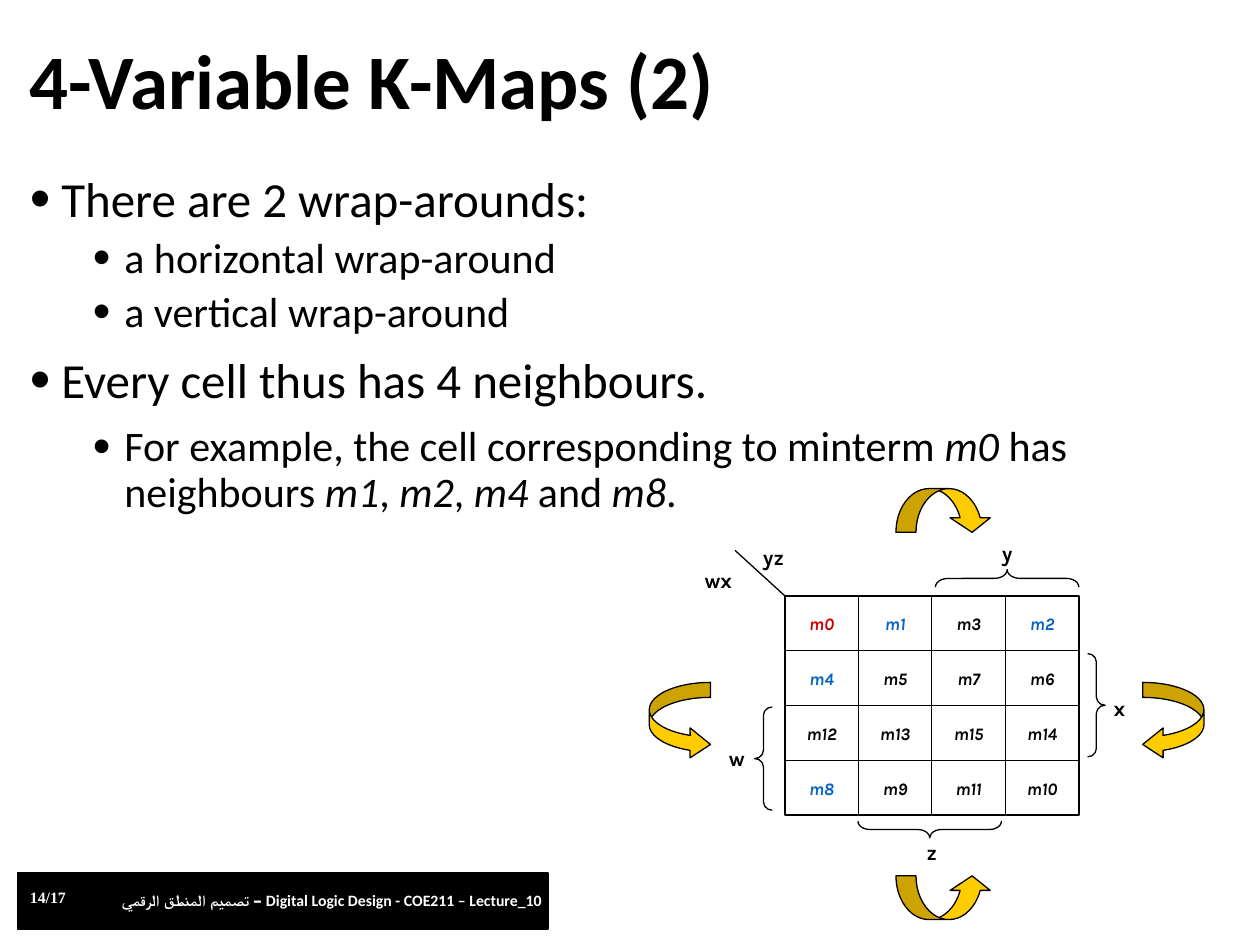
from dataclasses import dataclass

from lxml.etree import SubElement
from pptx import Presentation
from pptx.dml.color import RGBColor
from pptx.enum.shapes import MSO_CONNECTOR as Connector, MSO_SHAPE as Preset
from pptx.enum.text import MSO_ANCHOR as Anchor, PP_ALIGN as Align
from pptx.oxml.ns import qn
from pptx.util import Pt

COLORS = {"black": "000000", "white": "FFFFFF", "red": "CC0000", "blue": "0563C1", "gold": "FFCC00"}
TITLE = {"name": "Calibri", "size": Pt(44), "bold": True}
FOOTER = {"name": "Calibri", "size": Pt(9), "bold": True}
NUMBER = {**FOOTER, "name": "Times New Roman"}
LABEL = {"name": "Karla", "size": Pt(12), "bold": True}
MINTERM = {**LABEL, "size": Pt(10), "italic": True}

MAP_LEFT, MAP_TOP = 448.5, 340.5
CELL_WIDTH, CELL_HEIGHT = 42, 31.35
MAP = [
    ["m0", "m1", "m3", "m2"],
    ["m4", "m5", "m7", "m6"],
    ["m12", "m13", "m15", "m14"],
    ["m8", "m9", "m11", "m10"],
]
CELL_COLORS = {"m0": "red", **dict.fromkeys(["m1", "m2", "m4", "m8"], "blue")}


@dataclass
class Area:
    left: float
    top: float
    width: float
    height: float

    def points(self) -> list:
        return [Pt(value) for value in (self.left, self.top, self.width, self.height)]


@dataclass
class Label:
    text: str
    area: Area


@dataclass
class Outline:
    preset: Preset
    area: Area
    adjustments: tuple = ()
    rotation: int = 0
    flip: str = ""
    fill: str = ""
    weight: float = 0.75


@dataclass
class Bullet:
    level: int
    before: int
    unit: str
    spans: list


LABELS = [
    Label("w", Area(405.5, 422.5, 31, 25)),
    Label("x", Area(624.25, 394, 31, 25)),
    Label("y", Area(560, 305.25, 31, 19.5)),
    Label("z", Area(517, 476, 31, 19)),
    Label("wx", Area(384.5, 321, 52, 22)),
    Label("yz", Area(424, 307.5, 36, 20)),
]
SIDE_BRACE, FLAT_BRACE = (0.475, 0.5), (0.72, 0.5)
SIDE_ARROW, FLAT_ARROW = (0.244, 0.488, 0.333), (0.459, 0.918, 0.333)
OUTLINES = [
    Outline(Preset.LEFT_BRACE, Area(431.25, 404, 10, 59), SIDE_BRACE),
    Outline(Preset.LEFT_BRACE, Area(621.5, 373.5, 10, 59), SIDE_BRACE, flip="flipH"),
    Outline(Preset.LEFT_BRACE, Area(570.5, 289.5, 10, 82), FLAT_BRACE, rotation=90),
    Outline(Preset.LEFT_BRACE, Area(526.5, 433, 9.5, 82), FLAT_BRACE, rotation=270),
    Outline(Preset.CURVED_RIGHT_ARROW, Area(371, 390, 35, 44), SIDE_ARROW, fill="gold"),
    Outline(Preset.CURVED_RIGHT_ARROW, Area(653, 390, 35, 44), SIDE_ARROW, flip="flipH", fill="gold"),
    Outline(Preset.CURVED_UP_ARROW, Area(512, 500.5, 55, 25), FLAT_ARROW, fill="gold"),
    Outline(Preset.CURVED_UP_ARROW, Area(512, 279.25, 55, 25), FLAT_ARROW, flip="flipV", fill="gold"),
]
BULLETS = [
    Bullet(0, 10, "spcPts", ["There are 2 wrap-arounds:"]),
    Bullet(1, 5, "spcPts", ["a horizontal wrap-around"]),
    Bullet(1, 5, "spcPts", ["a vertical wrap-around"]),
    Bullet(0, 40, "spcPct", ["Every cell thus has 4 neighbours."]),
    Bullet(1, 40, "spcPct", [
        "For example, the cell corresponding to minterm ", "m0", " has neighbours ",
        "m1", ", ", "m2", ", ", "m4", " and ", "m8", ".",
    ]),
]


def color(name: str) -> RGBColor:
    return RGBColor.from_string(COLORS[name])


def add_span(para, text: str, style: dict, ink: str = "black") -> None:
    span = para.add_run()
    span.text = text
    for attribute, value in style.items():
        setattr(span.font, attribute, value)
    span.font.color.rgb = color(ink)


def add_box(page, area: Area, wrap: bool = True):
    frame = page.shapes.add_textbox(*area.points()).text_frame
    frame.word_wrap = wrap
    return frame


def add_text(page, label: Label, style: dict, ink: str = "black", align=Align.LEFT, wrap: bool = True):
    frame = add_box(page, label.area, wrap)
    frame.paragraphs[0].alignment = align
    add_span(frame.paragraphs[0], label.text, style, ink)
    return frame


def add_outline(page, outline: Outline) -> None:
    shape = page.shapes.add_shape(outline.preset, *outline.area.points())
    shape.shadow.inherit = False
    shape.rotation = outline.rotation
    for index, value in enumerate(outline.adjustments):
        shape.adjustments[index] = value
    if outline.flip:
        shape.element.spPr.find(qn("a:xfrm")).set(outline.flip, "1")
    if outline.fill:
        shape.fill.solid()
        shape.fill.fore_color.rgb = color(outline.fill)
    else:
        shape.fill.background()
    shape.line.color.rgb = color("black")
    shape.line.width = Pt(outline.weight)


def add_line(page, *ends: float) -> None:
    line = page.shapes.add_connector(Connector.STRAIGHT, *[Pt(value) for value in ends])
    line.line.color.rgb = color("black")
    line.line.width = Pt(0.75)
    SubElement(line.element.spPr, qn("a:effectLst"))


def add_bullet(para, bullet: Bullet) -> None:
    para.level = bullet.level
    para.line_spacing = 0.9
    properties = para._p.get_or_add_pPr()
    properties.set("marL", str(Pt(18 + 36 * bullet.level)))
    properties.set("indent", str(Pt(-18)))
    scale = 1000 if bullet.unit == "spcPct" else 100
    before = SubElement(properties, qn("a:spcBef"))
    SubElement(before, qn(f"a:{bullet.unit}"), val=str(bullet.before * scale))
    SubElement(properties, qn("a:buSzPct"), val="120000")
    SubElement(properties, qn("a:buFont"), typeface="Arial")
    SubElement(properties, qn("a:buChar"), char="•")
    for index, text in enumerate(bullet.spans):
        style = {"name": "Calibri", "size": Pt(28 - 4 * bullet.level), "italic": index % 2 == 1}
        add_span(para, text, style)


def add_map(page) -> None:
    width, height = 4 * CELL_WIDTH, 4 * CELL_HEIGHT
    add_outline(page, Outline(Preset.RECTANGLE, Area(MAP_LEFT, MAP_TOP, width, height), weight=1))
    for step in range(1, 4):
        x, y = MAP_LEFT + step * CELL_WIDTH, MAP_TOP + step * CELL_HEIGHT
        add_line(page, x, MAP_TOP, x, MAP_TOP + height)
        add_line(page, MAP_LEFT, y, MAP_LEFT + width, y)
    add_line(page, MAP_LEFT, MAP_TOP, 420, 314.5)
    for row, names in enumerate(MAP):
        for column, name in enumerate(names):
            left = MAP_LEFT + column * CELL_WIDTH
            top = MAP_TOP + row * CELL_HEIGHT + 6.25
            label = Label(name, Area(left, top, CELL_WIDTH, 25))
            add_text(page, label, MINTERM, CELL_COLORS.get(name, "black"), Align.CENTER)


def main() -> None:
    deck = Presentation()
    deck.slide_width, deck.slide_height = Pt(720), Pt(540)
    page = deck.slides.add_slide(deck.slide_layouts[6])

    add_outline(page, Outline(Preset.RECTANGLE, Area(10, 499, 303, 32), fill="black", weight=1))
    add_text(page, Label("14/17", Area(10, 504, 37, 18)), NUMBER, "white", wrap=False)
    course = "تصميم المنطق الرقمي – Digital Logic Design - COE211 – Lecture_10"
    add_text(page, Label(course, Area(62.5, 505.5, 268, 18)), FOOTER, "white")

    title = add_text(page, Label("4-Variable K-Maps (2)", Area(10, 18, 701, 61)), TITLE)
    title.vertical_anchor = Anchor.MIDDLE
    title.paragraphs[0].line_spacing = 0.9

    body = add_box(page, Area(10, 96.5, 701, 389.5))
    for index, bullet in enumerate(BULLETS):
        add_bullet(body.add_paragraph() if index else body.paragraphs[0], bullet)

    add_map(page)
    for outline in OUTLINES:
        add_outline(page, outline)
    for label in LABELS:
        add_text(page, label, LABEL, align=Align.CENTER)
    deck.save("out.pptx")


if __name__ == "__main__":
    main()
